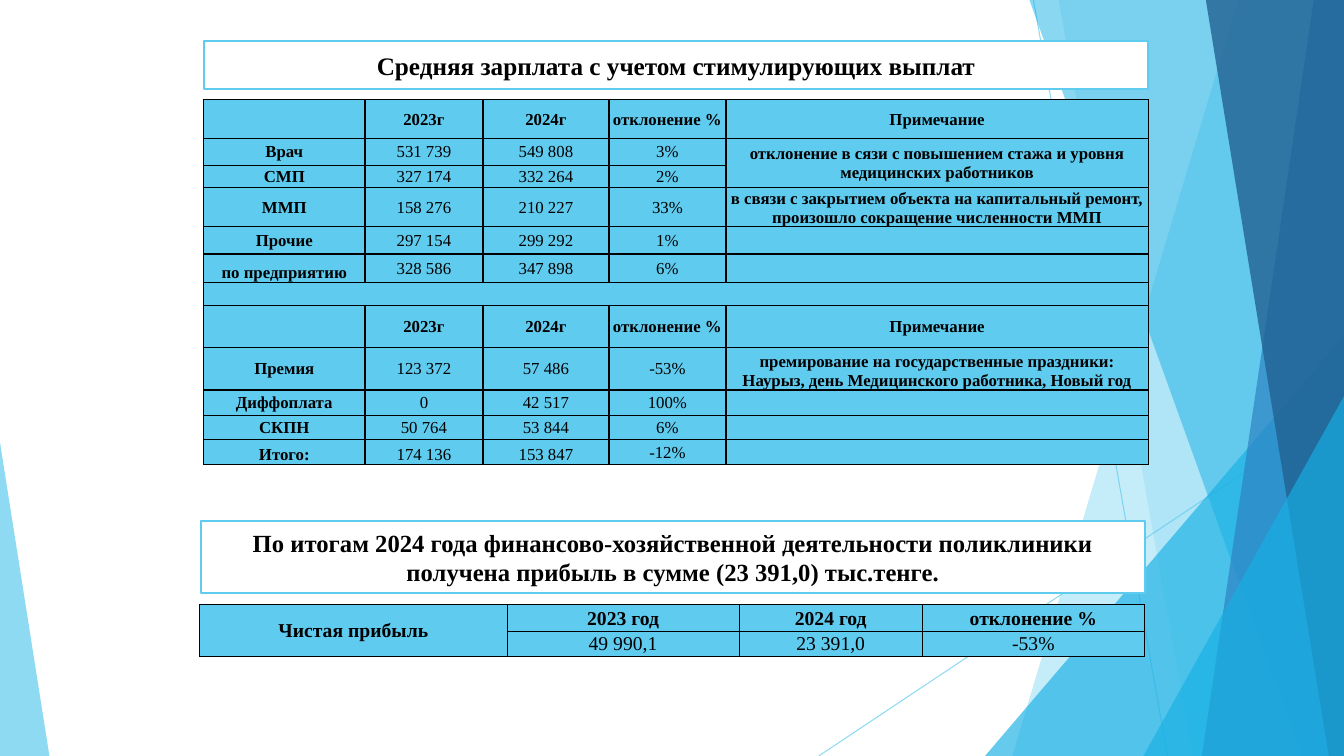
from dataclasses import dataclass

from lxml.etree import SubElement
from pptx import Presentation
from pptx.dml.color import RGBColor
from pptx.enum.shapes import MSO_CONNECTOR, MSO_SHAPE
from pptx.enum.text import MSO_ANCHOR as Anchor, MSO_AUTO_SIZE, PP_ALIGN
from pptx.oxml.ns import qn
from pptx.util import Inches, Pt

COLORS = {"sky": "5FCBEF", "azure": "17B0E4", "blue": "2E83C3", "navy": "226292",
          "white": "FFFFFF", "black": "000000"}
FONT = "Times New Roman"
WIDTH, HEIGHT = 13.33, 7.5


@dataclass
class Ray:
    start: tuple[float, float]
    end: tuple[float, float]


@dataclass
class Band:
    """Full-height facet reaching the right edge, given by its left edge."""
    top_x: float
    bottom_x: float
    color: str
    opacity: int


@dataclass
class Corner:
    """Right triangle standing on the bottom edge; apex 0 is left, 1 is right."""
    left: float
    top: float
    width: float
    apex: int
    color: str
    opacity: int


@dataclass
class Grid:
    left: float
    top: float
    cols: list[float]
    heights: list[float]
    rows: list[list[str]]
    merges: list[tuple[int, int, int, int]]
    headers: set[int]
    bold_cols: set[int]
    bottom_cells: set[tuple[int, int]]
    size: float
    border: float


RAYS = [Ray((10.25, 0), (11.58, HEIGHT)), Ray((WIDTH, 4.03), (8.12, HEIGHT))]
FACETS = [
    Band(12.28, 10.04, "sky", 36),
    Band(10.5, 11.83, "sky", 20),
    Corner(9.77, 3.33, 3.56, 1, "azure", 66),
    Band(10.21, 12.91, "azure", 50),
    Band(13.03, 11.92, "blue", 70),
    Band(11.96, 13.18, "navy", 80),
    Corner(11.34, 3.93, 1.99, 1, "azure", 66),
    Corner(0, 4.39, 0.49, 0, "sky", 70),
]

HEADER = ["", "2023г", "2024г", "отклонение %", "Примечание"]
SALARY = Grid(
    2.02, 0.99, [1.6, 1.17, 1.25, 1.16, 4.19],
    [0.38, 0.27, 0.22, 0.39, 0.27, 0.28, 0.23, 0.42, 0.42, 0.25, 0.24, 0.25],
    [
        HEADER,
        ["Врач", "531 739", "549 808", "3%",
         "отклонение в сязи с повышением стажа и уровня медицинских работников"],
        ["СМП", "327 174", "332 264", "2%", ""],
        ["ММП", "158 276", "210 227", "33%",
         "в связи с закрытием объекта на капитальный ремонт, "
         "произошло сокращение численности ММП"],
        ["Прочие", "297 154", "299 292", "1%", ""],
        ["по предприятию", "328 586", "347 898", "6%", ""],
        [""] * 5,
        HEADER,
        ["Премия", "123 372", "57 486", "-53%",
         "премирование на государственные праздники: "
         "Наурыз, день Медицинского работника, Новый год"],
        ["Диффоплата", "0", "42 517", "100%", ""],
        ["СКПН", "50 764", "53 844", "6%", ""],
        ["Итого:", "174 136", "153 847", "-12%", ""],
    ],
    merges=[(1, 4, 2, 4), (6, 0, 6, 4)], headers={0, 7}, bold_cols={0, 4},
    bottom_cells={(3, 4), (5, 0), (8, 4), (11, 0), (11, 1), (11, 2)},
    size=12, border=1)
PROFIT = Grid(
    1.98, 6, [3.05, 2.3, 1.82, 2.2], [0.26, 0.25],
    [["Чистая прибыль", "2023 год", "2024 год", "отклонение %"],
     ["", "49 990,1", "23 391,0", "-53%"]],
    merges=[(0, 0, 1, 0)], headers={0}, bold_cols={0}, bottom_cells=set(),
    size=14, border=0.5)


def rgb(name: str) -> RGBColor:
    return RGBColor.from_string(COLORS[name])


def set_opacity(sp, percent: int) -> None:
    color = next(sp.element.iter(qn("a:srgbClr")))
    SubElement(color, qn("a:alpha"), val=str(percent * 1000))


def add_ray(s, ray: Ray) -> None:
    line = s.shapes.add_connector(MSO_CONNECTOR.STRAIGHT,
                                  *map(Inches, ray.start + ray.end))
    line.line.color.rgb = rgb("sky")
    line.line.width = Pt(0.75)
    set_opacity(line, 70)
    SubElement(line.element.spPr, qn("a:effectLst"))


def add_facet(s, facet: Band | Corner) -> None:
    if isinstance(facet, Band):
        points = [(WIDTH, 0), (WIDTH, HEIGHT), (facet.bottom_x, HEIGHT)]
        outline = s.shapes.build_freeform(Inches(facet.top_x), 0)
        outline.add_line_segments([(Inches(x), Inches(y)) for x, y in points])
        sp = outline.convert_to_shape()
    else:
        sp = s.shapes.add_shape(
            MSO_SHAPE.ISOSCELES_TRIANGLE, Inches(facet.left), Inches(facet.top),
            Inches(facet.width), Inches(HEIGHT - facet.top))
        sp.adjustments[0] = facet.apex
    sp.shadow.inherit = False
    sp.fill.solid()
    sp.fill.fore_color.rgb = rgb(facet.color)
    sp.line.fill.background()
    set_opacity(sp, facet.opacity)


def write(tf, text: str, size: float, bold: bool) -> None:
    p = tf.paragraphs[0]
    p.alignment = PP_ALIGN.CENTER
    if not text:  # keeps an empty cell from growing to the default text size
        SubElement(p._p, qn("a:endParaRPr"), sz=str(size * 100))
        return
    r = p.add_run()
    r.text = text
    r.font.name, r.font.size, r.font.bold = FONT, Pt(size), bold
    r.font.color.rgb = rgb("black")


def format_banner(sp, left: float, top: float, height: float, text: str,
                  size: float) -> None:
    sp.left, sp.top = Inches(left), Inches(top)
    sp.width, sp.height = Inches(9.37), Inches(height)
    sp.fill.solid()
    sp.fill.fore_color.rgb = rgb("white")
    sp.line.color.rgb = rgb("sky")
    sp.line.width = Pt(1.5)
    tf = sp.text_frame
    tf.word_wrap, tf.auto_size = True, MSO_AUTO_SIZE.NONE
    tf.vertical_anchor = Anchor.MIDDLE
    write(tf, text, size, True)


def add_borders(cell, width: float) -> None:
    props = cell._tc.get_or_add_tcPr()
    for side in ("lnL", "lnR", "lnT", "lnB"):
        line = SubElement(props, qn(f"a:{side}"), w=str(Pt(width)))
        fill = SubElement(line, qn("a:solidFill"))
        SubElement(fill, qn("a:srgbClr"), val=COLORS["black"])


def add_grid(s, grid: Grid) -> None:
    table = s.shapes.add_table(
        len(grid.heights), len(grid.cols), Inches(grid.left), Inches(grid.top),
        Inches(sum(grid.cols)), Inches(sum(grid.heights))).table
    table.first_row = table.horz_banding = False
    for column, width in zip(table.columns, grid.cols):
        column.width = Inches(width)
    for i, row in enumerate(grid.rows):
        table.rows[i].height = Inches(grid.heights[i])
        for j, text in enumerate(row):
            cell = table.cell(i, j)
            add_borders(cell, grid.border)
            cell.fill.solid()
            cell.fill.fore_color.rgb = rgb("sky")
            cell.margin_left = cell.margin_right = cell.margin_top = Inches(0.01)
            cell.margin_bottom = 0
            at_bottom = (i, j) in grid.bottom_cells
            cell.vertical_anchor = Anchor.BOTTOM if at_bottom else Anchor.MIDDLE
            write(cell.text_frame, text, grid.size,
                  i in grid.headers or j in grid.bold_cols)
    for top, left, bottom, right in grid.merges:
        table.cell(top, left).merge(table.cell(bottom, right))


def main() -> None:
    prs = Presentation()
    prs.slide_width, prs.slide_height = Inches(WIDTH), Inches(HEIGHT)
    s = prs.slides.add_slide(prs.slide_layouts[5])
    for ray in RAYS:
        add_ray(s, ray)
    for facet in FACETS:
        add_facet(s, facet)

    title = s.shapes.title
    title.element.getparent().append(title.element)  # in front of the facets
    format_banner(title, 2.02, 0.41, 0.47,
                  "Средняя зарплата с учетом стимулирующих выплат", 18)
    add_grid(s, SALARY)

    summary = s.shapes.add_shape(MSO_SHAPE.RECTANGLE, 0, 0, 0, 0)
    summary.shadow.inherit = False
    format_banner(summary, 1.99, 5.17, 0.71,
                  "По итогам 2024 года финансово-хозяйственной деятельности "
                  "поликлиники получена прибыль в сумме (23 391,0) тыс.тенге.", 17.6)
    add_grid(s, PROFIT)
    prs.save("out.pptx")


if __name__ == "__main__":
    main()
